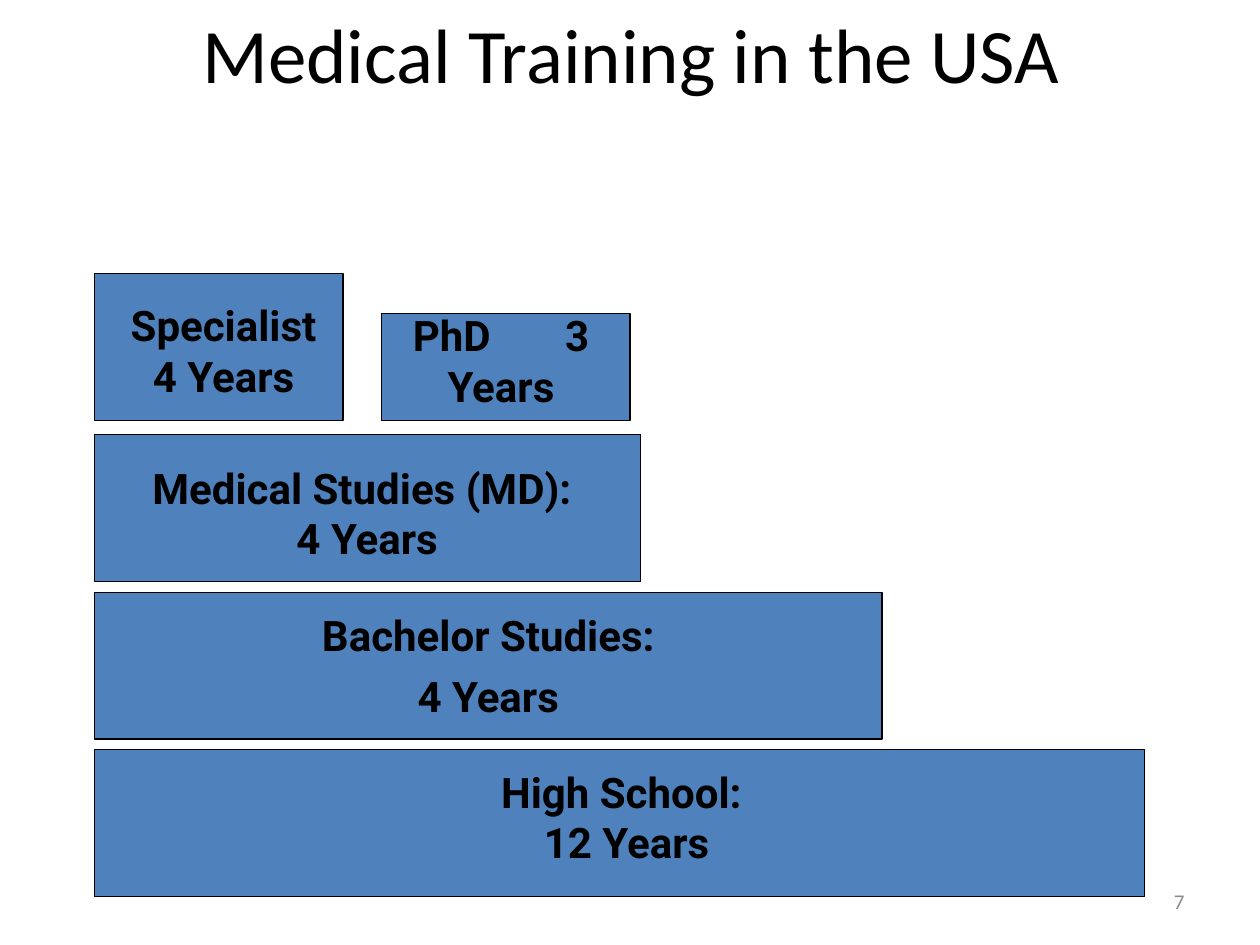
from dataclasses import dataclass

from pptx import Presentation
from pptx.dml.color import RGBColor
from pptx.enum.shapes import MSO_SHAPE
from pptx.enum.text import MSO_ANCHOR, MSO_AUTO_SIZE, PP_ALIGN
from pptx.util import Pt


@dataclass(frozen=True)
class Theme:
    heading_font: str = "Calibri"
    label_font: str = "Roboto"
    title_size: int = 44
    label_size: int = 24
    number_size: int = 12
    ink: RGBColor = RGBColor(0, 0, 0)
    bar: RGBColor = RGBColor(0x4F, 0x81, 0xBD)
    muted: RGBColor = RGBColor(0x8C, 0x8C, 0x8C)


THEME = Theme()

BAR_LEFT = 54
BAR_HEIGHT = 84
STUDY_TOP = 248.4
STUDY_STEP = 90
STUDY_WIDTHS = (312, 450, 600)
BRANCH_WIDTH = 142
BRANCH_BOTTOM = 240.4
BRANCHES = ((BAR_LEFT, BAR_HEIGHT), (218, 61.2))

LABELS = (
    ("High School: \v12 Years", (226, 434.2, 264.2, 65.5)),
    ("Bachelor Studies:\n4 Years", (54, 344.9, 450, 71.3)),
    ("Medical Studies (MD): \v4 Years", (59.8, 260.6, 300, 65.5)),
    ("Specialist\v4 Years", (59.8, 167.8, 136, 65.5)),
)
PHD_PARTS = ("PhD", " ", "3 Years")
PHD_BOX = (224, 173.5, 124.6, 65.5)
PHD_GAP = 36.5


def format_text(text_frame, font_name, size, color, alignment, bold=False):
    for paragraph in text_frame.paragraphs:
        paragraph.alignment = alignment
        for run in paragraph.runs:
            run.font.name = font_name
            run.font.size = Pt(size)
            run.font.bold = bold
            run.font.color.rgb = color


def set_title(slide, text):
    title = slide.shapes.title
    title.left, title.top, title.width, title.height = map(Pt, (36.7, 0, 648, 60.5))
    title.text_frame.text = text
    title.text_frame.vertical_anchor = MSO_ANCHOR.MIDDLE
    format_text(title.text_frame, THEME.heading_font, THEME.title_size,
                THEME.ink, PP_ALIGN.CENTER)


def add_bar(slide, left, top, width, height):
    bar = slide.shapes.add_shape(MSO_SHAPE.RECTANGLE, *map(Pt, (left, top, width, height)))
    bar.shadow.inherit = False
    bar.fill.solid()
    bar.fill.fore_color.rgb = THEME.bar
    bar.line.color.rgb = THEME.ink
    bar.line.width = Pt(0.75)


def add_text_box(slide, text, box):
    text_frame = slide.shapes.add_textbox(*map(Pt, box)).text_frame
    text_frame.word_wrap = True
    text_frame.text = text
    return text_frame


def format_label(text_frame):
    text_frame.auto_size = MSO_AUTO_SIZE.SHAPE_TO_FIT_TEXT
    format_text(text_frame, THEME.label_font, THEME.label_size,
                THEME.ink, PP_ALIGN.CENTER, bold=True)


def add_label(slide, text, box):
    text_frame = add_text_box(slide, text, box)
    for paragraph in text_frame.paragraphs:
        paragraph.space_before = Pt(6)
    format_label(text_frame)


def add_spaced_label(slide, parts, box, gap):
    text_frame = add_text_box(slide, "", box)
    paragraph = text_frame.paragraphs[0]
    for part in parts:
        run = paragraph.add_run()
        run.text = part
        if part == " ":
            run.font._element.set("spc", str(int(gap * 100)))
    format_label(text_frame)


def add_slide_number(slide, number):
    text_frame = add_text_box(slide, number, (516, 500.5, 168, 28.8))
    text_frame.vertical_anchor = MSO_ANCHOR.MIDDLE
    format_text(text_frame, THEME.heading_font, THEME.number_size,
                THEME.muted, PP_ALIGN.RIGHT)


def main():
    presentation = Presentation()
    presentation.slide_width, presentation.slide_height = Pt(720), Pt(540)
    slide = presentation.slides.add_slide(presentation.slide_layouts[5])

    set_title(slide, "Medical Training in the USA")
    for index, width in enumerate(STUDY_WIDTHS):
        add_bar(slide, BAR_LEFT, STUDY_TOP + index * STUDY_STEP, width, BAR_HEIGHT)
    for left, height in BRANCHES:
        add_bar(slide, left, BRANCH_BOTTOM - height, BRANCH_WIDTH, height)

    add_spaced_label(slide, PHD_PARTS, PHD_BOX, PHD_GAP)
    for text, box in LABELS:
        add_label(slide, text, box)
    add_slide_number(slide, "7")

    presentation.save("out.pptx")


if __name__ == "__main__":
    main()
